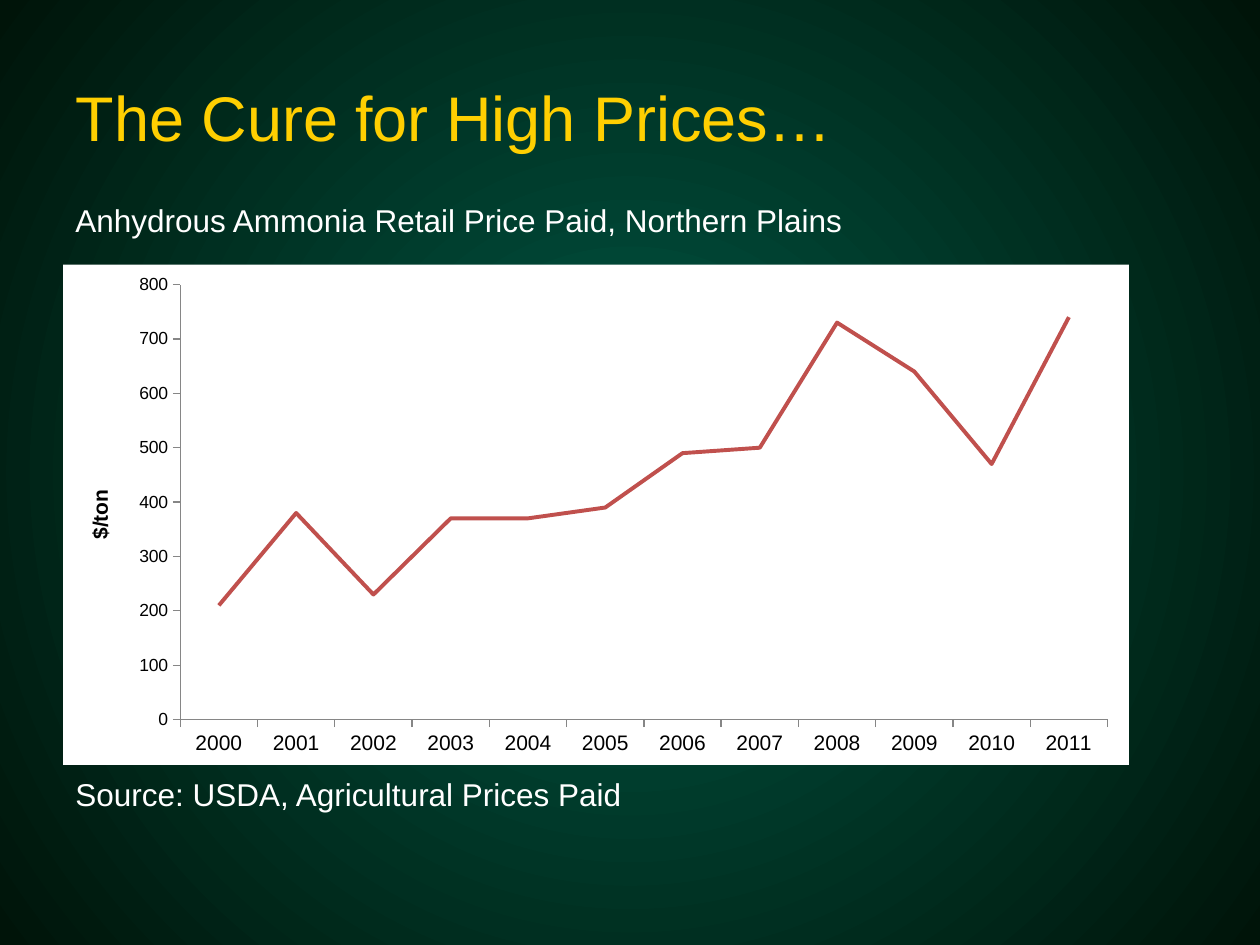
from lxml import etree
from pptx import Presentation
from pptx import util as u
from pptx.chart import data
from pptx.dml.color import RGBColor
from pptx.enum import chart as ch, text
from pptx.oxml import parse_xml
from pptx.oxml.ns import nsdecls, qn

GOLD = RGBColor(0xFF, 0xCF, 0x01)
WHITE = RGBColor(0xFF, 0xFF, 0xFF)
BLACK = RGBColor(0, 0, 0)
GRAY = RGBColor(0x86, 0x86, 0x86)
RED = RGBColor(0xC0, 0x50, 0x4D)
GREEN = RGBColor(0x00, 0x56, 0x43)
DARK_GREEN = RGBColor(0x00, 0x14, 0x09)

PRICES = {2000: 210, 2001: 380, 2002: 230, 2003: 370, 2004: 370, 2005: 390,
          2006: 490, 2007: 500, 2008: 730, 2009: 640, 2010: 470, 2011: 740}


def inches(*box):
    """Return the box lengths in inches."""
    return [u.Inches(v) for v in box]


def set_font(font, size, color, bold=False):
    """Apply the slide's typeface with a size and colour."""
    fmt = {"name": "Arial", "size": u.Pt(size), "bold": bold}
    for name, value in fmt.items():
        setattr(font, name, value)
    font.color.rgb = color


def set_background(s):
    """Fill the slide with a gradient that darkens from the centre."""
    fill = s.background.fill
    fill.gradient()
    for stop, pos, color in zip(fill.gradient_stops, (0.02, 1), (GREEN, DARK_GREEN)):
        stop.position = pos
        stop.color.rgb = color
    grad = s.background._cSld.find(".//" + qn("a:gradFill"))
    grad.remove(grad.find(qn("a:lin")))
    path = etree.SubElement(grad, qn("a:path"), path="circle")
    etree.SubElement(path, qn("a:fillToRect"), l="50000", t="50000", r="50000", b="50000")


def add_title(s, box, title):
    """Place the title placeholder in the box."""
    sp = s.shapes.title
    sp.left, sp.top, sp.width, sp.height = inches(*box)
    tf = sp.text_frame
    tf.text = title
    fmt = {"auto_size": text.MSO_AUTO_SIZE.NONE, "vertical_anchor": text.MSO_ANCHOR.MIDDLE}
    for name, value in fmt.items():
        setattr(tf, name, value)
    p = tf.paragraphs[0]
    p.alignment = text.PP_ALIGN.LEFT
    set_font(p.runs[0].font, 36, GOLD)


def add_caption(s, box, caption):
    """Add one line of white text in the box."""
    tf = s.shapes.add_textbox(*inches(*box)).text_frame
    tf.word_wrap = True
    tf.auto_size = text.MSO_AUTO_SIZE.SHAPE_TO_FIT_TEXT
    r = tf.paragraphs[0].add_run()
    r.text = caption
    set_font(r.font, 18, WHITE)


def format_axis(axis, size):
    """Give an axis outward ticks, a thin grey line and labels of a size."""
    fmt = {"has_major_gridlines": False, "major_tick_mark": ch.XL_TICK_MARK.OUTSIDE,
           "minor_tick_mark": ch.XL_TICK_MARK.NONE}
    for name, value in fmt.items():
        setattr(axis, name, value)
    axis.format.line.color.rgb = GRAY
    axis.format.line.width = u.Pt(0.75)
    set_font(axis.tick_labels.font, size, BLACK)


def set_plot_area(chart, **fractions):
    """Fix the inner plot area as fractions of the chart."""
    plot_area = chart._chartSpace.chart.plotArea
    for old in plot_area.findall(qn("c:layout")):
        plot_area.remove(old)
    sizes = "".join(f'<c:{k} val="{v}"/>' for k, v in fractions.items())
    plot_area.insert(0, parse_xml(
        f'<c:layout {nsdecls("c")}><c:manualLayout><c:layoutTarget val="inner"/>'
        f'<c:xMode val="edge"/><c:yMode val="edge"/>{sizes}</c:manualLayout></c:layout>'))


def add_price_chart(s, box):
    """Add the line chart of yearly prices on a white panel."""
    cd = data.CategoryChartData()
    cd.categories = [str(year) for year in PRICES]
    cd.add_series("Series 1", PRICES.values())
    chart = s.shapes.add_chart(ch.XL_CHART_TYPE.LINE, *inches(*box), cd).chart
    chart.has_legend = chart.has_title = False
    set_font(chart.font, 10, BLACK)
    space = chart._chartSpace
    space.chart.addnext(parse_xml(
        f'<c:spPr {nsdecls("c", "a")}><a:solidFill><a:srgbClr val="{WHITE}"/></a:solidFill>'
        '<a:ln><a:noFill/></a:ln></c:spPr>'))
    set_plot_area(chart, x=0.11, y=0.04, w=0.87, h=0.87)

    format_axis(chart.category_axis, 12)
    axis = chart.value_axis
    format_axis(axis, 10)
    axis.minimum_scale, axis.maximum_scale, axis.major_unit = 0, 800, 100
    tf = axis.axis_title.text_frame
    tf.text = "$/ton"
    set_font(tf.paragraphs[0].runs[0].font, 12, BLACK, bold=True)

    plot = chart.plots[0]
    plot.vary_by_categories = False
    series = plot.series[0]
    series.smooth = False
    series.marker.style = ch.XL_MARKER_STYLE.NONE
    series.format.line.color.rgb = RED
    series.format.line.width = u.Pt(2.25)


def main():
    """Build and save the slide."""
    prs = Presentation()
    prs.slide_width, prs.slide_height = inches(10, 7.5)
    s = prs.slides.add_slide(prs.slide_layouts[5])
    set_background(s)
    add_title(s, (0.5, 0.3, 9, 1.25), "The Cure for High Prices…")
    add_price_chart(s, (0.5, 2.1, 8.46, 3.97))
    add_caption(s, (0.5, 6.1, 5.94, 0.4), "Source: USDA, Agricultural Prices Paid")
    add_caption(s, (0.5, 1.55, 7.7, 0.4),
                "Anhydrous Ammonia Retail Price Paid, Northern Plains")
    prs.save("out.pptx")


if __name__ == "__main__":
    main()
